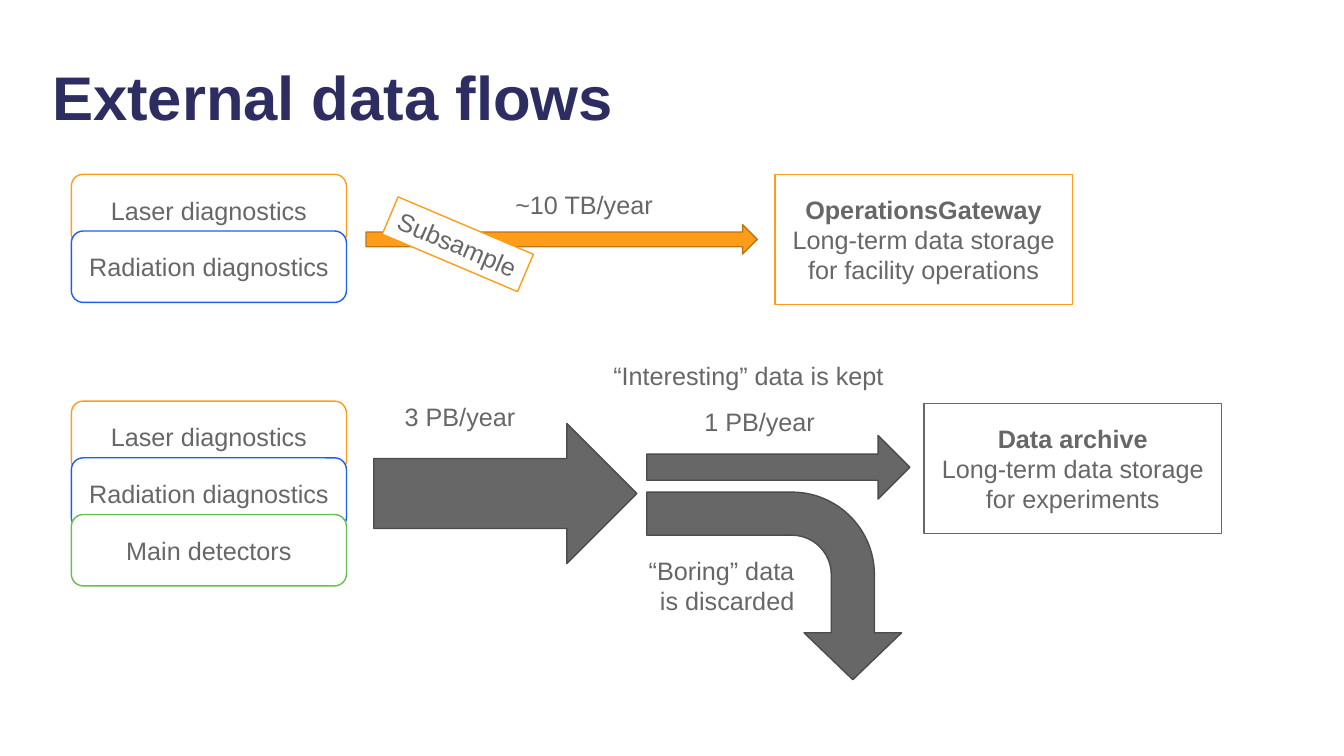
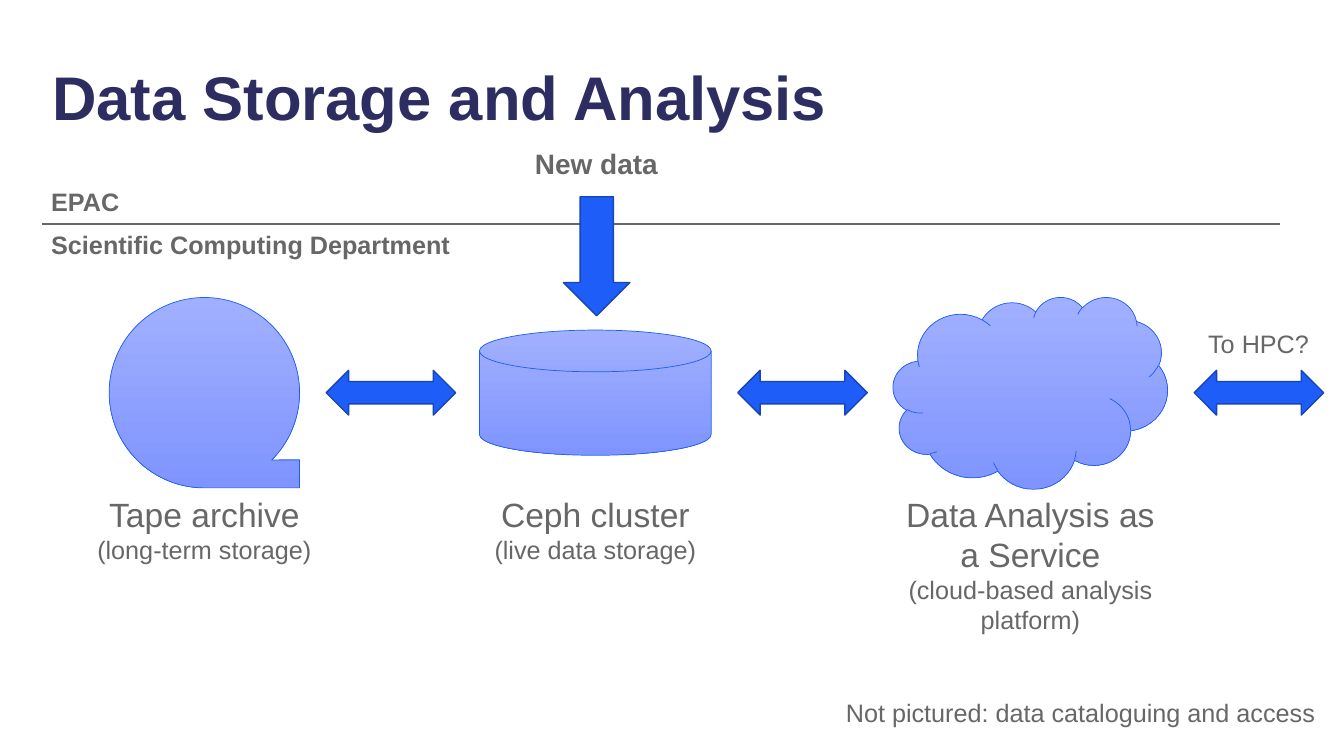
"""Build two slides on data flows, storage and analysis."""
from lxml import etree
from pptx import Presentation
from pptx.dml.color import RGBColor
from pptx.enum.shapes import MSO_CONNECTOR, MSO_SHAPE
from pptx.enum.text import MSO_ANCHOR, MSO_AUTO_SIZE, PP_ALIGN
from pptx.oxml.ns import qn
from pptx.util import Pt

LEFT, CENTER, RIGHT = PP_ALIGN.LEFT, PP_ALIGN.CENTER, PP_ALIGN.RIGHT
TOP, MIDDLE = MSO_ANCHOR.TOP, MSO_ANCHOR.MIDDLE
RECT, ROUNDED = MSO_SHAPE.RECTANGLE, MSO_SHAPE.ROUNDED_RECTANGLE
RIGHT_ARROW, BENT_ARROW = MSO_SHAPE.RIGHT_ARROW, MSO_SHAPE.BENT_ARROW
DOWN_ARROW, TWO_WAY = MSO_SHAPE.DOWN_ARROW, MSO_SHAPE.LEFT_RIGHT_ARROW
TAPE, CLOUD = MSO_SHAPE.FLOWCHART_SEQUENTIAL_ACCESS_STORAGE, MSO_SHAPE.CLOUD
DISK = MSO_SHAPE.FLOWCHART_MAGNETIC_DISK

NAVY, GREY, DARK_GREY, WHITE = "2D2D62", "676767", "4C4C4C", "FFFFFF"
ORANGE, DARK_ORANGE, GREEN = "FF9D1B", "BD7414", "67C04D"
BLUE, DARK_BLUE = "1E5DF8", "1645B7"
FADE = ("A1B0FE", "7F94FF")
color = RGBColor.from_string


def draw(slide, kind, box, fill, line, width=1):
    """Add a filled, outlined shape; a pair of fill colours fades downwards."""
    shape = slide.shapes.add_shape(kind, *map(Pt, box))
    shape.shadow.inherit = False
    if isinstance(fill, tuple):
        shape.fill.gradient()
        shape.fill.gradient_angle = 270
        for stop, shade in zip(shape.fill.gradient_stops, fill):
            stop.color.rgb = color(shade)
    else:
        shape.fill.solid()
        shape.fill.fore_color.rgb = color(fill)
    shape.line.color.rgb = color(line)
    shape.line.width = Pt(width)
    return shape


def write(shape, lines, align=LEFT, anchor=TOP, wrap=False, ink=GREY):
    """Fill a shape with (text, size, bold) paragraphs."""
    frame = shape.text_frame
    frame.auto_size = MSO_AUTO_SIZE.NONE
    frame.word_wrap = wrap
    frame.vertical_anchor = anchor
    for i, (text, size, bold) in enumerate(lines):
        paragraph = frame.add_paragraph() if i else frame.paragraphs[0]
        paragraph.text = text
        paragraph.alignment = align
        paragraph.font.name = "Arial"
        paragraph.font.size = Pt(size)
        paragraph.font.bold = bold
        paragraph.font.color.rgb = color(ink)


deck = Presentation()
deck.slide_width, deck.slide_height = Pt(960), Pt(540)

slides = []
for heading in ("External data flows", "Data Storage and Analysis"):
    slide = deck.slides.add_slide(deck.slide_layouts[5])
    title = slide.shapes.title
    title.left, title.top, title.width, title.height = map(Pt, (30, 29, 803, 85))
    write(title, [(heading, 44, True)], anchor=MIDDLE, wrap=True, ink=NAVY)
    title.text_frame.paragraphs[0].line_spacing = 0.9
    slides.append(slide)
flows, storage = slides

sources = [("Laser diagnostics", ORANGE), ("Radiation diagnostics", BLUE),
           ("Main detectors", GREEN)]
for stack_top, count in ((124.5, 2), (286.5, 3)):
    for i, (source, outline) in enumerate(sources[:count]):
        box = (51, stack_top + i * 40.5, 196.5, 51)
        write(draw(flows, ROUNDED, box, WHITE, outline),
              [(source, 18, False)], CENTER, MIDDLE, True)

draw(flows, RIGHT_ARROW, (261.5, 160.5, 279.5, 21), ORANGE, DARK_ORANGE)
draw(flows, RIGHT_ARROW, (267, 302.5, 188, 100), GREY, DARK_GREY)
kept = draw(flows, RIGHT_ARROW, (462, 311, 188, 45.5), GREY, DARK_GREY)
kept.adjustments[0] = 0.41
discarded = draw(flows, BENT_ARROW, (486, 327.5, 134, 182), GREY, DARK_GREY)
discarded.rotation = 90
for i, ratio in enumerate((0.23, 0.26, 0.25, 0.44)):
    discarded.adjustments[i] = ratio

subsample = draw(flows, RECT, (274.5, 160, 105, 29), WHITE, ORANGE)
subsample.rotation = 23
write(subsample, [("Subsample", 18, False)])

destinations = [
    (553.5, 124.5, ORANGE, "OperationsGateway",
     "Long-term data storage for facility operations"),
    (660, 288, GREY, "Data archive", "Long-term data storage for experiments"),
]
for left, top, outline, store, purpose in destinations:
    write(draw(flows, RECT, (left, top, 212.5, 93), WHITE, outline),
          [(store, 18, True), (purpose, 18, False)], CENTER, MIDDLE, True)

divider = storage.shapes.add_connector(
    MSO_CONNECTOR.STRAIGHT, Pt(30), Pt(160), Pt(914.5), Pt(160))
divider.line.color.rgb = color(GREY)
divider.line.width = Pt(1.5)
etree.SubElement(divider._element.spPr, qn("a:effectLst"))

stages = [
    (TAPE, 78, 136, 136, "Tape archive", "(long-term storage)"),
    (DISK, 342.5, 165.5, 89.5, "Ceph cluster", "(live data storage)"),
    (CLOUD, 638, 196, 137, "Data Analysis as a Service",
     "(cloud-based analysis platform)"),
]
axis, caption_width = 280.5, 211.5
for kind, left, width, height, stage, role in stages:
    draw(storage, kind, (left, axis - height / 2, width, height), FADE, BLUE, 0.5)
    draw(storage, TWO_WAY, (left + width + 19, axis - 16, 92.5, 32), BLUE, DARK_BLUE)
    caption = storage.shapes.add_textbox(
        Pt(left + (width - caption_width) / 2), Pt(349), Pt(caption_width), Pt(58))
    write(caption, [(stage, 24, False), (role, 18, False)], CENTER, wrap=True)
draw(storage, DOWN_ARROW, (402.5, 140.5, 47.5, 85), BLUE, DARK_BLUE)

labels = [
    (flows, (361, 132, 114, 29), "~10 TB/year", 18, False, LEFT),
    (flows, (282, 283, 94.5, 29), "3 PB/year", 18, False, LEFT),
    (flows, (496, 286.5, 94.5, 29), "1 PB/year", 18, False, LEFT),
    (flows, (431, 253.5, 209.5, 29), "“Interesting” data is kept", 18, False, LEFT),
    (flows, (446.5, 393, 128, 51), "“Boring” data is discarded", 18, False, RIGHT),
    (storage, (374.5, 101, 103, 31.5), "New data", 20, True, CENTER),
    (storage, (29.5, 129.5, 63.5, 29), "EPAC", 18, True, LEFT),
    (storage, (29.5, 160, 302.5, 29), "Scientific Computing Department", 18, True, LEFT),
    (storage, (593.5, 494.5, 353, 29), "Not pictured: data cataloguing and access",
     18, False, RIGHT),
    (storage, (855.5, 231, 87, 29), "To HPC?", 18, False, CENTER),
]
for slide, box, text, size, bold, align in labels:
    label = slide.shapes.add_textbox(*map(Pt, box))
    write(label, [(text, size, bold)], align, wrap=box[3] > 40)

deck.save("out.pptx")
